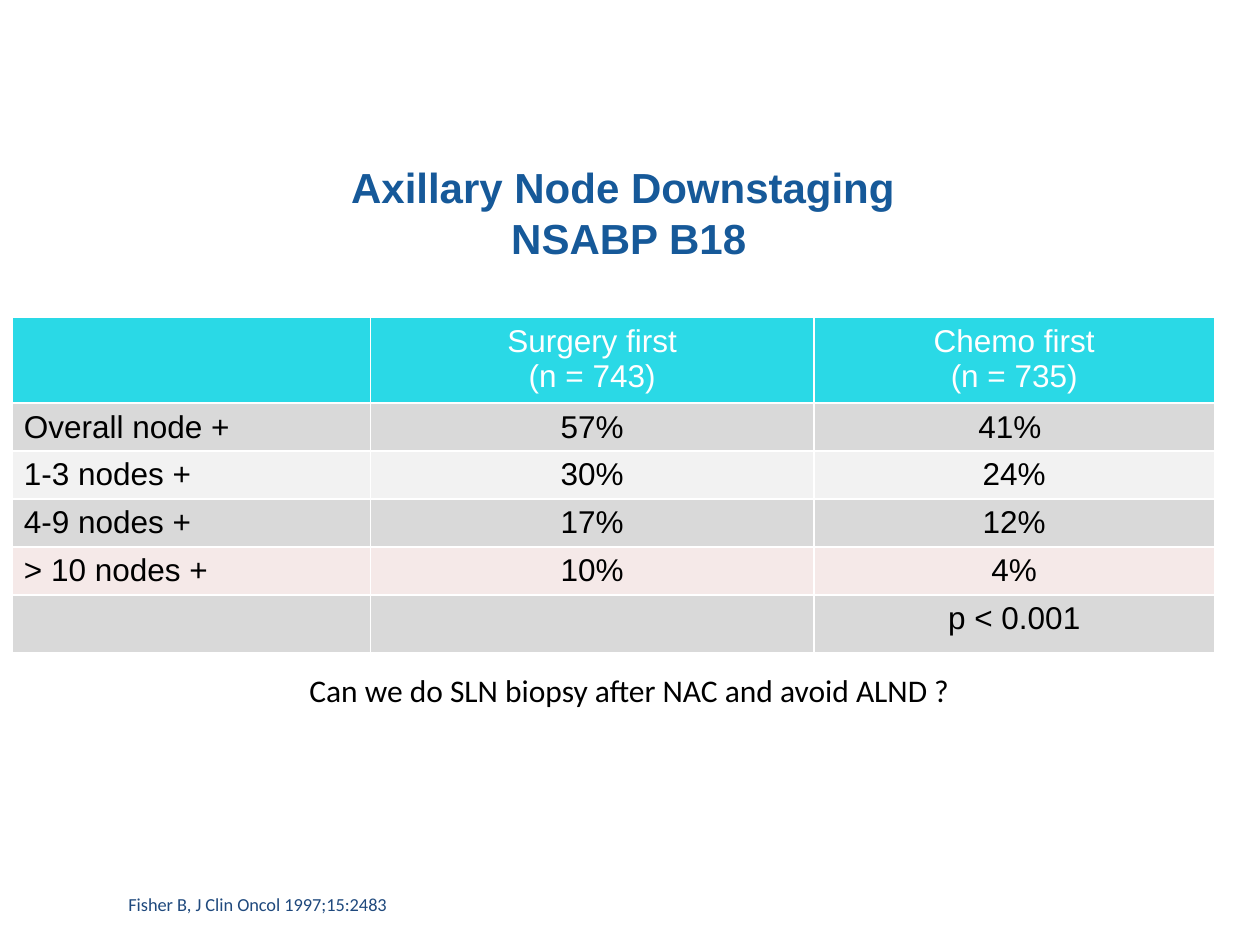
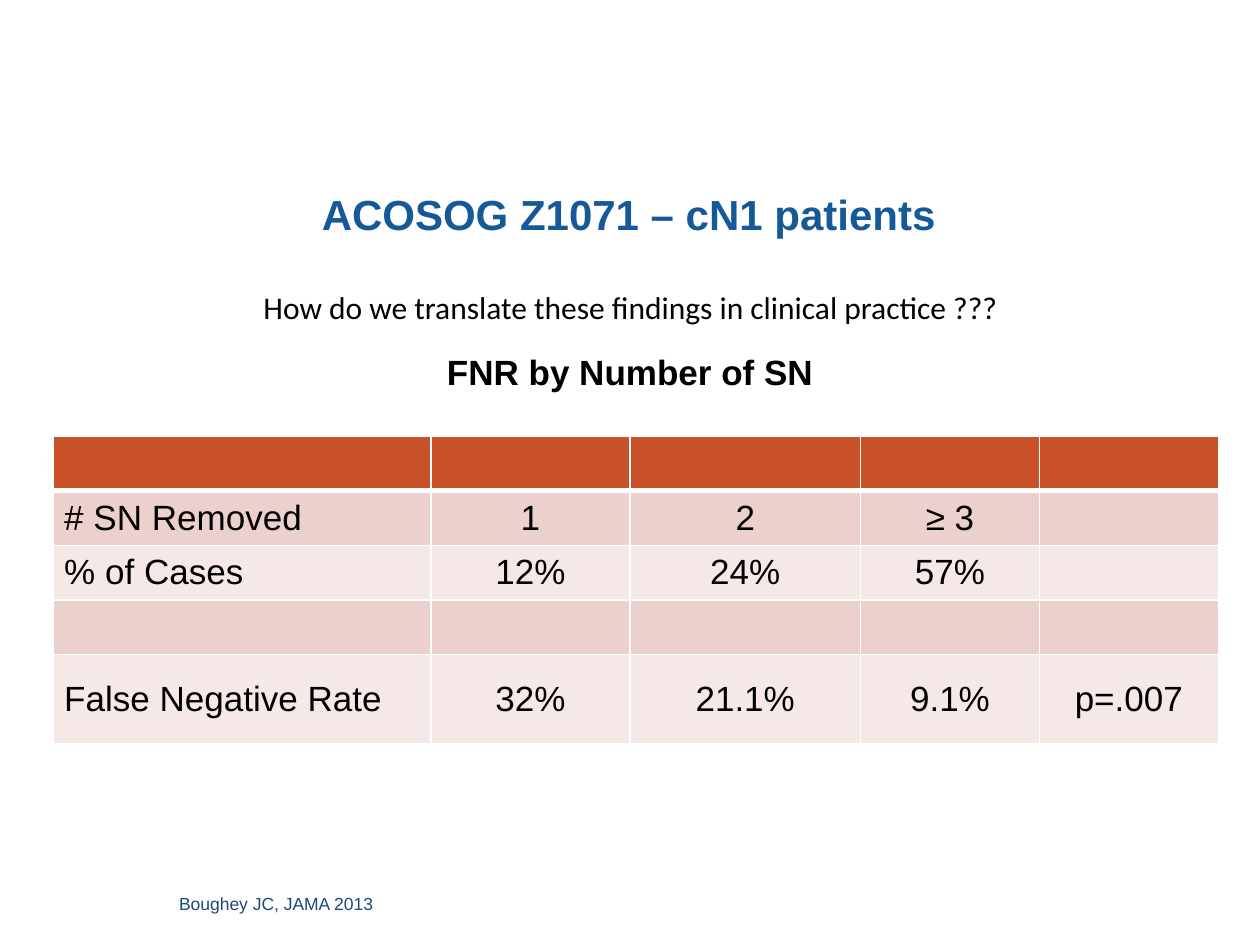
from dataclasses import dataclass

from lxml import etree
from pptx import Presentation
from pptx.dml.color import RGBColor
from pptx.enum import text
from pptx.oxml.ns import qn
from pptx.util import Inches, Pt

LEFT, CENTER = text.PP_ALIGN.LEFT, text.PP_ALIGN.CENTER
TOP, MIDDLE = text.MSO_ANCHOR.TOP, text.MSO_ANCHOR.MIDDLE


@dataclass(frozen=True)
class Theme:
    heading_font: str = "Arial"
    note_font: str = "Calibri"
    title: str = "165999"
    citation: str = "1F497D"
    ink: str = "000000"
    white: str = "FFFFFF"
    cyan: str = "2AD9E6"
    rust: str = "C95127"
    grey: str = "D9D9D9"
    pale_grey: str = "F2F2F2"
    rose: str = "EBD0CD"
    pale_rose: str = "F5E9E8"
    title_size: float = 24
    large_size: float = 20
    body_size: float = 18
    citation_size: float = 10.5
    small_citation_size: float = 10


THEME = Theme()


@dataclass(frozen=True)
class Box:
    left: float
    top: float
    width: float
    height: float

    def inches(self) -> tuple:
        return tuple(map(Inches, (self.left, self.top, self.width, self.height)))


@dataclass(frozen=True)
class Style:
    font: str
    size: float
    color: str
    bold: bool = False
    align: int = CENTER


@dataclass(frozen=True)
class Label:
    words: str
    box: Box
    style: Style
    anchor: int = TOP
    wrap: bool = True


@dataclass(frozen=True)
class Row:
    cells: tuple
    height: float
    fill: str


@dataclass(frozen=True)
class Grid:
    left: float
    top: float
    columns: tuple
    rows: tuple
    size: float
    header_color: str
    anchor: int = TOP
    header_rule: float = 1


TITLE = Style(THEME.heading_font, THEME.title_size, THEME.title, bold=True)
SUBTITLE = Style(THEME.heading_font, THEME.large_size, THEME.ink, bold=True)
QUESTION = Style(THEME.note_font, THEME.body_size, THEME.ink)


def format_text(tf, style: Style) -> None:
    for p in tf.paragraphs:
        p.alignment = style.align
        for r in p.runs:
            r.font.name, r.font.size, r.font.bold = style.font, Pt(style.size), style.bold
            r.font.color.rgb = RGBColor.from_string(style.color)
        # Empty lines keep the same height as written ones
        if not p.runs:
            etree.SubElement(p._p, qn("a:endParaRPr"), sz=str(int(style.size * 100)))


def add_title(s, words: str, box: Box) -> None:
    sp = s.shapes.title
    sp.left, sp.top, sp.width, sp.height = box.inches()
    tf = sp.text_frame
    tf.text = words
    tf.auto_size = text.MSO_AUTO_SIZE.NONE
    tf.vertical_anchor = MIDDLE
    format_text(tf, TITLE)


def add_label(s, label: Label) -> None:
    tf = s.shapes.add_textbox(*label.box.inches()).text_frame
    tf.text = label.words
    tf.word_wrap = label.wrap
    tf.vertical_anchor = label.anchor
    format_text(tf, label.style)


def add_border(cell, side: str, width: float) -> None:
    ln = etree.SubElement(cell._tc.get_or_add_tcPr(), qn(f"a:ln{side}"), w=str(Pt(width)))
    fill = etree.SubElement(ln, qn("a:solidFill"))
    etree.SubElement(fill, qn("a:srgbClr"), val=THEME.white)


def add_grid(s, grid: Grid) -> None:
    box = Box(grid.left, grid.top, sum(grid.columns), sum(r.height for r in grid.rows))
    table = s.shapes.add_table(len(grid.rows), len(grid.columns), *box.inches()).table
    table.first_row = table.horz_banding = False
    for column, width in zip(table.columns, grid.columns):
        column.width = Inches(width)
    for i, row in enumerate(grid.rows):
        table.rows[i].height = Inches(row.height)
        color = THEME.ink if i else grid.header_color
        rules = {"L": 1, "R": 1,
                 "T": grid.header_rule if i == 1 else 1,
                 "B": grid.header_rule if i == 0 else 1}
        for j, words in enumerate(row.cells):
            cell = table.cell(i, j)
            cell.text = words
            cell.vertical_anchor = grid.anchor
            cell.margin_left = cell.margin_right = Inches(0.09)
            cell.margin_top = cell.margin_bottom = Inches(0.05)
            for side, width in rules.items():
                add_border(cell, side, width)
            cell.fill.solid()
            cell.fill.fore_color.rgb = RGBColor.from_string(row.fill)
            align = CENTER if j else LEFT
            format_text(cell.text_frame,
                        Style(THEME.heading_font, grid.size, color, align=align))


def build_downstaging(s) -> None:
    add_title(s, "Axillary Node Downstaging \vNSABP B18", Box(0.22, 1.27, 9.54, 0.83))
    # Node status by treatment order
    add_grid(s, Grid(0.1, 2.52, (2.84, 3.52, 3.18), (
        Row(("", "Surgery first\n(n = 743)", "Chemo first\n(n = 735)"), 0.68, THEME.cyan),
        Row(("Overall node +", "57%", "41% "), 0.38, THEME.grey),
        Row(("1-3 nodes +", "30%", "24%"), 0.38, THEME.pale_grey),
        Row(("4-9 nodes +", "17%", "12%"), 0.38, THEME.grey),
        Row(("> 10 nodes +", "10%", "4%"), 0.38, THEME.pale_rose),
        Row(("", "", "p < 0.001"), 0.46, THEME.grey),
    ), THEME.body_size, THEME.white))
    # Citation and question
    citation = Style(THEME.note_font, THEME.citation_size, THEME.citation, align=LEFT)
    add_label(s, Label("Fisher B, J Clin Oncol 1997;15:2483",
                       Box(0.92, 7.08, 5.88, 0.19), citation, MIDDLE))
    add_label(s, Label("Can we do SLN biopsy after NAC and avoid ALND ?",
                       Box(2.32, 5.28, 5.35, 0.4), QUESTION, wrap=False))


def build_false_negatives(s) -> None:
    add_title(s, "ACOSOG Z1071 – cN1 patients", Box(0.22, 1.41, 9.54, 0.57))
    # Citation, subtitle and question
    citation = Style(THEME.heading_font, THEME.small_citation_size, THEME.citation)
    add_label(s, Label("Boughey JC, JAMA 2013", Box(0.83, 7.04, 2.72, 0.27), citation))
    add_label(s, Label("FNR by Number of SN", Box(0.74, 2.73, 8.52, 0.44), SUBTITLE))
    add_label(s, Label("How do we translate these findings in clinical practice ???",
                       Box(1.95, 2.24, 6.11, 0.4), QUESTION, wrap=False))
    # False negative rate by nodes removed
    blank = ("",) * 5
    add_grid(s, Grid(0.42, 3.46, (3, 1.58, 1.83, 1.42, 1.42), (
        Row(blank, 0.4, THEME.rust),
        Row(("# SN Removed", "1", "2", "≥ 3", ""), 0.43, THEME.rose),
        Row(("% of Cases", "12%", "24%", "57%", ""), 0.43, THEME.pale_rose),
        Row(blank, 0.43, THEME.rose),
        Row(("False Negative Rate", "32%", "21.1%", "9.1%", "p=.007"), 0.71, THEME.pale_rose),
    ), THEME.large_size, THEME.white, MIDDLE, header_rule=3))


def main() -> None:
    prs = Presentation()
    prs.slide_width, prs.slide_height = Inches(10), Inches(7.5)
    title_only = prs.slide_layouts[5]
    for build in (build_downstaging, build_false_negatives):
        build(prs.slides.add_slide(title_only))
    prs.save("out.pptx")


if __name__ == "__main__":
    main()
